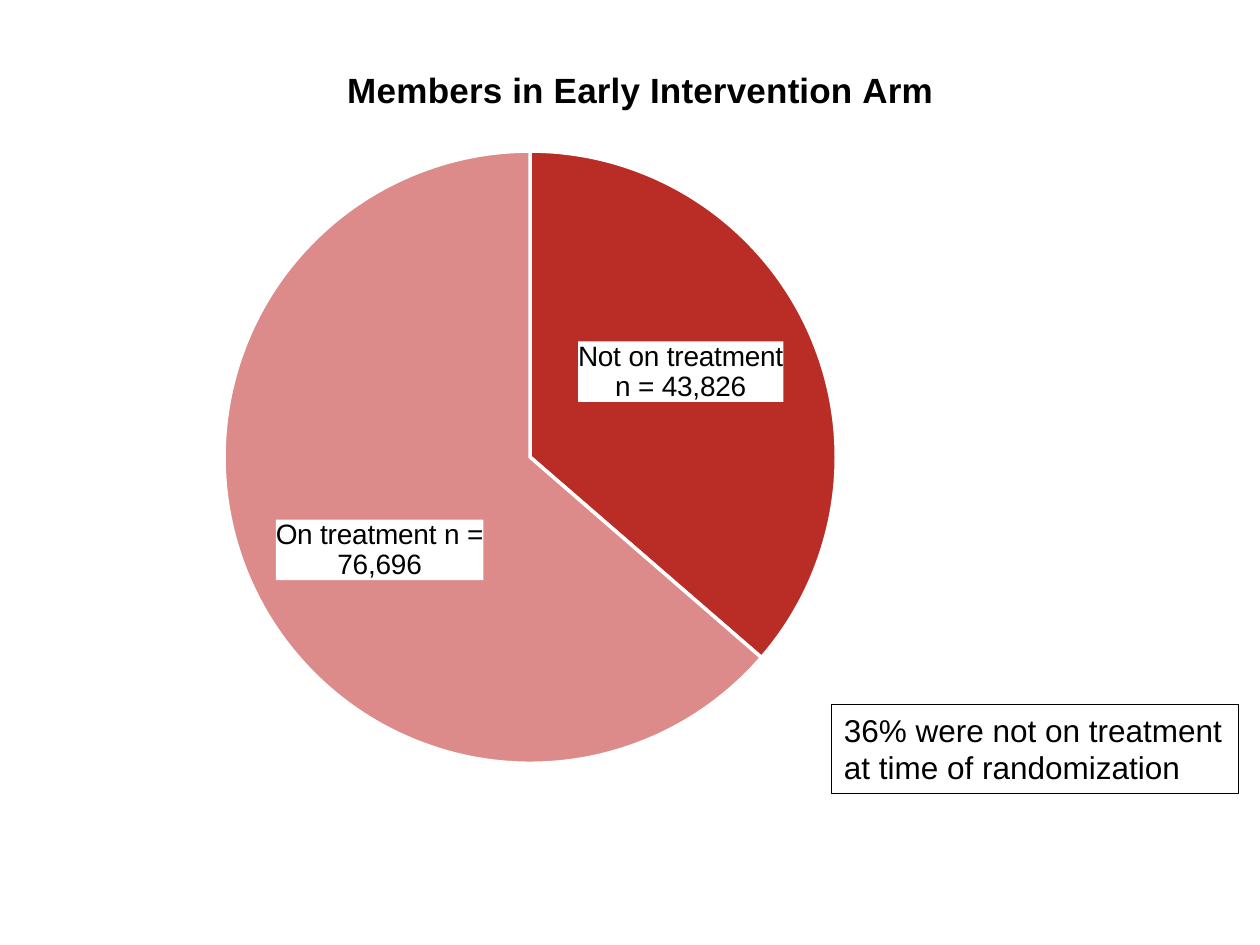
from dataclasses import dataclass

from lxml import etree
from pptx import Presentation
from pptx.chart.data import CategoryChartData
from pptx.dml.color import RGBColor
from pptx.enum.chart import XL_CHART_TYPE, XL_LABEL_POSITION
from pptx.enum.shapes import MSO_SHAPE
from pptx.enum.text import MSO_ANCHOR, PP_ALIGN
from pptx.oxml import parse_xml
from pptx.oxml.ns import nsdecls, qn
from pptx.util import Inches, Pt

PIE = XL_CHART_TYPE.PIE
CENTER = XL_LABEL_POSITION.CENTER
RECTANGLE = MSO_SHAPE.RECTANGLE
TOP = MSO_ANCHOR.TOP
LEFT = PP_ALIGN.LEFT


@dataclass(frozen=True)
class Theme:
    font: str = "Arial"
    text: RGBColor = RGBColor(0x00, 0x00, 0x00)
    paper: RGBColor = RGBColor(0xFF, 0xFF, 0xFF)
    untreated: RGBColor = RGBColor(0xB9, 0x2D, 0x26)
    treated: RGBColor = RGBColor(0xDD, 0x8B, 0x8A)
    title_size: Pt = Pt(20)
    note_size: Pt = Pt(18)
    label_size: Pt = Pt(16)
    chart_size: Pt = Pt(10)


THEME = Theme()

# Category, members, label lines, slice colour, label offset from slice centre
ARMS = [
    ("Not on treatment", 43826, ["Not on treatment", "n = 43,826"],
     THEME.untreated, (0.01, -0.03)),
    ("On treatment", 76696, ["On treatment n = 76,696"],
     THEME.treated, (-0.01, 0.04)),
]


def style(font, size, bold=False):
    font.name = THEME.font
    font.size = size
    font.bold = bold
    font.color.rgb = THEME.text


def manual_layout(**settings):
    """Build a chart layout element, as fractions of the chart box."""
    layout = parse_xml(f"<c:layout {nsdecls('c')}><c:manualLayout/></c:layout>")
    for tag, value in settings.items():
        etree.SubElement(layout[0], qn(f"c:{tag}")).set("val", str(value))
    return layout


def write_lines(text_frame, lines, size, bold=False):
    for index, line in enumerate(lines):
        paragraph = text_frame.paragraphs[0] if index == 0 else text_frame.add_paragraph()
        run = paragraph.add_run()
        run.text = line
        style(run.font, size, bold)


def add_slice(series, index, lines, color, offset):
    point = series.points[index]
    point.format.fill.solid()
    point.format.fill.fore_color.rgb = color
    point.format.line.color.rgb = THEME.paper
    point.format.line.width = Pt(2)

    # White label, nudged away from the slice centre
    write_lines(point.data_label.text_frame, lines, THEME.label_size)
    point.data_label.position = CENTER
    label = series._element.xpath(f"c:dLbls/c:dLbl[c:idx/@val='{index}']")[0]
    label.find(qn("c:idx")).addnext(manual_layout(x=offset[0], y=offset[1]))
    label.find(qn("c:tx")).addnext(parse_xml(
        f"<c:spPr {nsdecls('c', 'a')}><a:solidFill>"
        f'<a:srgbClr val="{THEME.paper}"/></a:solidFill></c:spPr>'))


def add_members_pie(slide, left, top, width, height):
    members = CategoryChartData(number_format="#,##0")
    members.categories = [arm[0] for arm in ARMS]
    members.add_series("Series 1", [arm[1] for arm in ARMS])
    chart = slide.shapes.add_chart(PIE, left, top, width, height, members).chart
    style(chart.font, THEME.chart_size)
    chart.has_legend = False

    # Title
    chart.has_title = True
    write_lines(chart.chart_title.text_frame,
                ["Members in Early Intervention Arm"], THEME.title_size, bold=True)
    title = chart.chart_title._element
    for old in title.findall(qn("c:layout")):
        title.remove(old)
    title.find(qn("c:tx")).addnext(
        manual_layout(xMode="edge", yMode="edge", x=0.245, y=0.014))

    # Plot area
    plot_area = chart._chartSpace.chart.plotArea
    for old in plot_area.findall(qn("c:layout")):
        plot_area.remove(old)
    plot_area.insert(0, manual_layout(
        layoutTarget="inner", xMode="edge", yMode="edge",
        x=0.142, y=0.136, w=0.54, h=0.84))

    # Slices and labels
    plot = chart.plots[0]
    plot.vary_by_categories = True
    series = plot.series[0]
    labels = series.data_labels
    labels.show_value = True
    labels.show_category_name = True
    labels.number_format = "#,##0"
    labels.number_format_is_linked = False
    style(labels.font, THEME.label_size)
    for index, (_, _, lines, color, offset) in enumerate(ARMS):
        add_slice(series, index, lines, color, offset)


def add_note(slide, left, top, width, height):
    note = slide.shapes.add_shape(RECTANGLE, left, top, width, height)
    note.shadow.inherit = False
    note.fill.background()
    note.line.color.rgb = THEME.text
    note.line.width = Pt(0.75)
    frame = note.text_frame
    frame.word_wrap = True
    frame.vertical_anchor = TOP
    paragraph = frame.paragraphs[0]
    paragraph.text = "36% were not on treatment at time of randomization"
    paragraph.alignment = LEFT
    style(paragraph.font, THEME.note_size)


def main():
    deck = Presentation()
    deck.slide_width, deck.slide_height = Inches(10), Inches(7.5)
    slide = deck.slides.add_slide(deck.slide_layouts[6])
    add_members_pie(slide, Inches(0.5), Inches(0.41), Inches(9), Inches(5.79))
    add_note(slide, Inches(6.6), Inches(5.59), Inches(3.23), Inches(0.71))
    deck.save("out.pptx")


if __name__ == "__main__":
    main()
